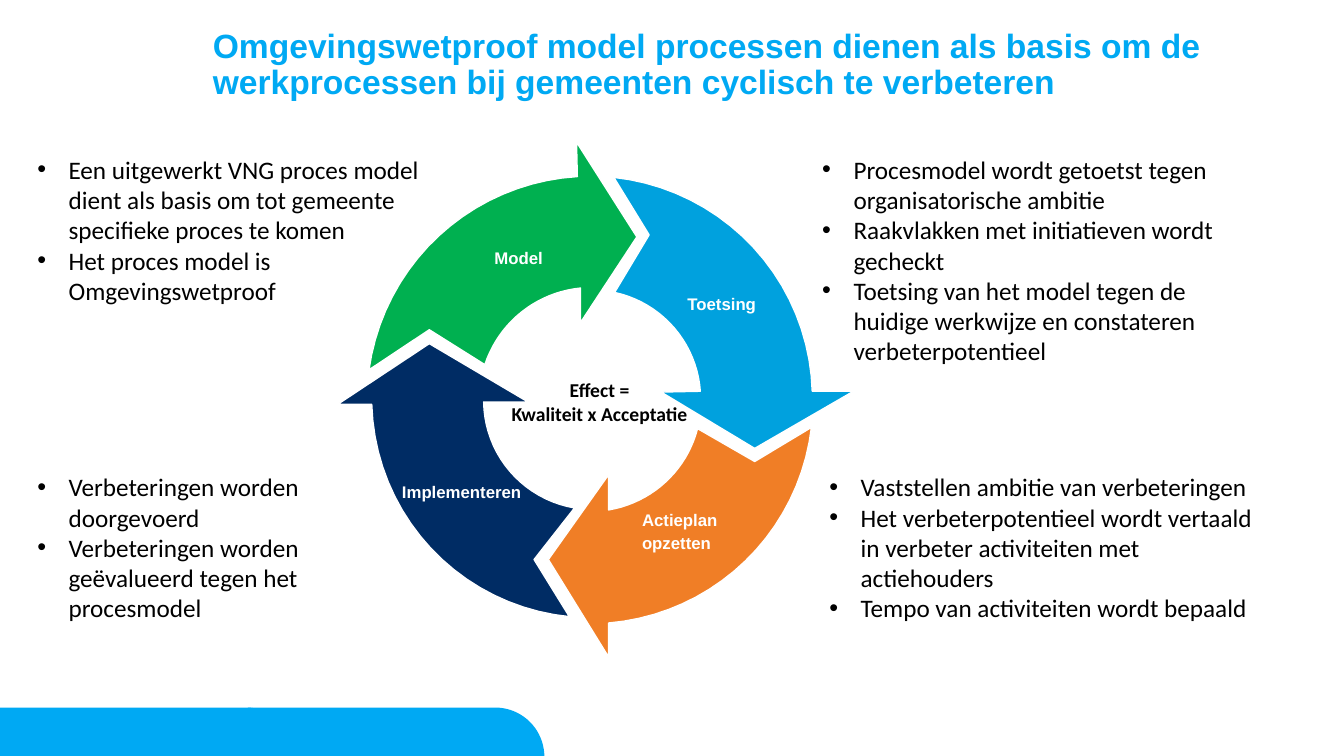
import math
from dataclasses import dataclass

from lxml import etree
from pptx import Presentation
from pptx import util as u
from pptx.dml.color import RGBColor
from pptx.enum import text


@dataclass(frozen=True)
class Theme:
    accent: str = "00A9F3"
    ink: str = "000000"
    paper: str = "FFFFFF"
    green: str = "00B050"
    blue: str = "00A1DE"
    orange: str = "F07E26"
    navy: str = "002C64"
    heading_font: str = "Arial"
    body_font: str = "Calibri"
    title_size: int = 24
    body_size: int = 18
    core_size: int = 14
    label_size: int = 12


def arc(start, end, centre, steps=20):
    """Points from start to end around centre, by the shorter way."""
    (x1, y1), (x2, y2), (cx, cy) = start, end, centre
    r1, r2 = math.hypot(x1 - cx, y1 - cy), math.hypot(x2 - cx, y2 - cy)
    a1 = math.atan2(y1 - cy, x1 - cx)
    sweep = math.remainder(math.atan2(y2 - cy, x2 - cx) - a1, math.tau)
    points = []
    for i in range(steps + 1):
        t = i / steps
        r, a = r1 + (r2 - r1) * t, a1 + sweep * t
        points.append((cx + r * math.cos(a), cy + r * math.sin(a)))
    return points


class SlideBuilder:
    def __init__(self, slide, theme):
        self.slide, self.theme = slide, theme

    def style(self, paragraph, font, size, color, bold=False):
        paragraph.font.name = font
        paragraph.font.size = u.Pt(size)
        paragraph.font.bold = bold
        paragraph.font.color.rgb = RGBColor.from_string(color)

    def title(self, box, wording):
        heading = self.slide.shapes.title
        heading.left, heading.top, heading.width, heading.height = map(u.Cm, box)
        frame = heading.text_frame
        frame.text = wording
        frame.auto_size = text.MSO_AUTO_SIZE.NONE
        frame.vertical_anchor = text.MSO_ANCHOR.TOP
        paragraph = frame.paragraphs[0]
        paragraph.alignment = text.PP_ALIGN.LEFT
        paragraph.line_spacing = 0.9
        t = self.theme
        self.style(paragraph, t.heading_font, t.title_size, t.accent, True)

    def outline(self, points, fill, edge=None):
        points = [(u.Cm(x), u.Cm(y)) for x, y in points]
        builder = self.slide.shapes.build_freeform(*points[0], scale=1.0)
        builder.add_line_segments(points[1:], close=True)
        shape = builder.convert_to_shape()
        shape.shadow.inherit = False
        shape.fill.solid()
        shape.fill.fore_color.rgb = RGBColor.from_string(fill)
        if edge:
            shape.line.color.rgb = RGBColor.from_string(edge)
            shape.line.width = u.Pt(1)
        else:
            shape.line.fill.background()

    def cycle_arrow(self, centre, fill, outer, head, inner, notch):
        points = arc(*outer, centre) + head + arc(*inner, centre) + [notch]
        self.outline(points, fill, self.theme.paper)

    def text_box(self, box, lines, wrap):
        frame = self.slide.shapes.add_textbox(*map(u.Cm, box)).text_frame
        frame.text = "\n".join(lines)
        frame.word_wrap = wrap
        frame.auto_size = text.MSO_AUTO_SIZE.SHAPE_TO_FIT_TEXT
        return frame

    def label(self, box, lines, align, spacing, wrap=False):
        frame = self.text_box(box, lines, wrap)
        frame.vertical_anchor = text.MSO_ANCHOR.MIDDLE
        frame.margin_left = frame.margin_right = 0
        frame.margin_top = frame.margin_bottom = 0
        t = self.theme
        for i, paragraph in enumerate(frame.paragraphs):
            paragraph.alignment = align
            paragraph.line_spacing = spacing
            if i:
                paragraph.space_before = u.Pt(0.8 * t.label_size)
            self.style(paragraph, t.heading_font, t.label_size, t.paper, True)

    def bullets(self, box, lines):
        t = self.theme
        indent = u.Cm(0.79)
        for paragraph in self.text_box(box, lines, True).paragraphs:
            props = paragraph._p.get_or_add_pPr()
            props.set("marL", str(indent))
            props.set("indent", str(-indent))
            ns = props.nsmap["a"]
            etree.SubElement(props, f"{{{ns}}}buFont", typeface="Arial")
            etree.SubElement(props, f"{{{ns}}}buChar", char="•")
            self.style(paragraph, t.body_font, t.body_size, t.ink)

    def core(self, box, lines):
        t = self.theme
        for paragraph in self.text_box(box, lines, False).paragraphs:
            paragraph.alignment = text.PP_ALIGN.CENTER
            self.style(paragraph, t.body_font, t.core_size, t.ink, True)


def main():
    theme = Theme()
    deck = Presentation()
    deck.slide_width, deck.slide_height = u.Cm(33.87), u.Cm(19.05)
    page = SlideBuilder(deck.slides.add_slide(deck.slide_layouts[5]), theme)

    # Footer band: two overlapping tabs with a rounded corner
    top, bottom, width = 17.83, 19.07, 7.47
    radius = bottom - top
    for left in (-0.02, 6.25):
        right = left + width
        corner = arc((right - radius, top), (right, bottom), (right - radius, bottom))
        page.outline([(left, bottom), (left, top)] + corner, theme.accent)

    # Title
    page.title((5.11, 0.61, 25.73, 1.98),
               "Omgevingswetproof model processen dienen als basis om de "
               "werkprocessen bij gemeenten cyclisch te verbeteren")

    # Cycle: fill, outer arc, arrowhead, inner arc, notch
    centre = (14.92, 10.07)
    cycle = [
        (theme.green, [(9.3, 9.32), (14.55, 4.45)],
         [(14.53, 3.58), (16.05, 5.97), (14.63, 8.13)],
         [(14.63, 7.26), (12.22, 9.19)], (10.82, 8.31)),
        (theme.orange, [(20.45, 10.77), (15.34, 15.7)],
         [(15.34, 16.56), (13.82, 14.1), (15.34, 11.96)],
         [(15.34, 12.85), (17.58, 10.8)], (19.02, 11.63)),
        (theme.navy, [(14.35, 15.54), (9.37, 10.19)],
         [(8.51, 10.19), (10.82, 8.66), (13.31, 10.13)],
         [(12.19, 10.13), (14.48, 12.8)], (13.46, 14.1)),
        (theme.blue, [(15.47, 4.47), (20.47, 9.86)],
         [(21.51, 9.86), (19.02, 11.3), (16.66, 9.88)],
         [(17.65, 9.86), (15.49, 7.37)], (16.36, 5.92)),
    ]
    for arrow in cycle:
        page.cycle_arrow(centre, *arrow)

    # Phase names
    middle, left = text.PP_ALIGN.CENTER, text.PP_ALIGN.LEFT
    page.label((17.3, 7.44, 1.78, 0.48), ["Toetsing"], middle, 0.95)
    page.label((12.45, 6.27, 1.24, 0.48), ["Model"], middle, 0.95)
    page.label((9.88, 12.17, 3.51, 0.48), ["Implementeren"], middle, 0.95, True)
    page.label((16.18, 13.03, 2.03, 0.91), ["Actieplan", "opzetten"], left, 0.5)

    # Explanation beside each phase
    page.bullets((0.69, 3.76, 10.34, 4.11), [
        "Een uitgewerkt VNG proces model dient als basis om tot gemeente "
        "specifieke proces te komen",
        "Het proces model is Omgevingswetproof"])
    page.bullets((20.47, 3.76, 11.35, 5.64), [
        "Procesmodel wordt getoetst tegen organisatorische ambitie",
        "Raakvlakken met initiatieven wordt gecheckt",
        "Toetsing van het model tegen de huidige werkwijze en constateren "
        "verbeterpotentieel"])
    page.bullets((20.65, 11.76, 11.35, 4.11), [
        "Vaststellen ambitie van verbeteringen",
        "Het verbeterpotentieel wordt vertaald in verbeter activiteiten met "
        "actiehouders",
        "Tempo van activiteiten wordt bepaald"])
    page.bullets((0.69, 11.76, 10.24, 4.11), [
        "Verbeteringen worden doorgevoerd",
        "Verbeteringen worden geëvalueerd tegen het procesmodel"])

    # Heart of the cycle
    page.core((12.62, 9.4, 4.98, 1.45), ["Effect =", "Kwaliteit x Acceptatie"])

    deck.save("out.pptx")


if __name__ == "__main__":
    main()
